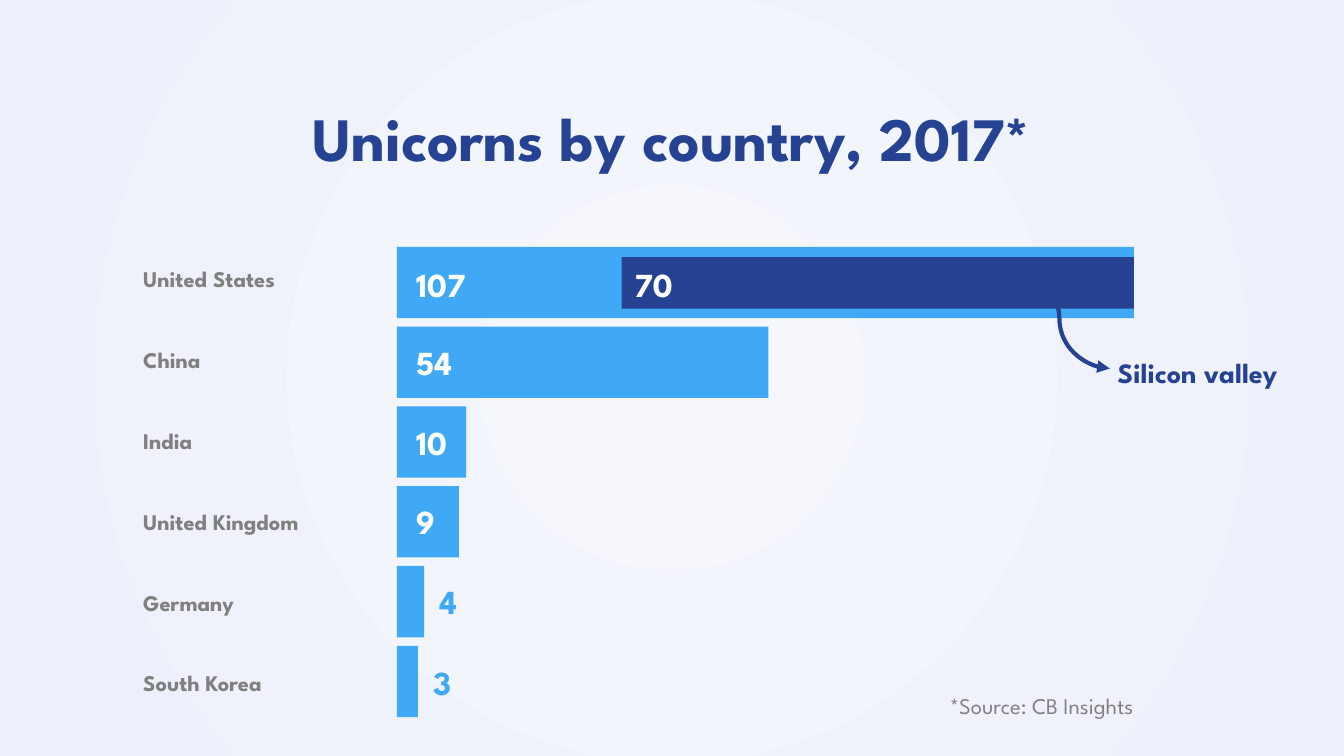
from dataclasses import dataclass

from lxml import etree
from pptx import Presentation
from pptx.dml.color import RGBColor
from pptx.enum.shapes import MSO_CONNECTOR, MSO_SHAPE
from pptx.enum.text import MSO_ANCHOR, MSO_AUTO_SIZE, PP_ALIGN
from pptx.oxml.ns import qn
from pptx.slide import Slide
from pptx.util import Emu, Pt

RECTANGLE = MSO_SHAPE.RECTANGLE
CURVE = MSO_CONNECTOR.CURVE
TOP, MIDDLE = MSO_ANCHOR.TOP, MSO_ANCHOR.MIDDLE
LEFT, CENTER, RIGHT = PP_ALIGN.LEFT, PP_ALIGN.CENTER, PP_ALIGN.RIGHT
FIT_SHAPE = MSO_AUTO_SIZE.SHAPE_TO_FIT_TEXT

FONT = "League Spartan"
COLORS = {
    "glow": "F5F7FD",
    "edge": "ECF0FA",
    "navy": "264292",
    "sky": "3FA9F5",
    "gray": "808080",
    "white": "FFFFFF",
}

SLIDE_W, SLIDE_H = 1280, 720
BAR_LEFT, BAR_TOP, BAR_H, BAR_PITCH = 378, 235, 68, 76
LONGEST_BAR, LARGEST_COUNT = 702, 107
COUNTRY_LEFT, COUNTRY_TOP, COUNTRY_PITCH = 127, 248, 77
TEXT_W, COUNTRY_H, COUNT_H = 205, 36, 48
SMALLEST_INSIDE = 9  # lower counts stand to the right of their bar


def px(length: int) -> Emu:
    return Emu(length * 9525)


def rgb(color: str) -> RGBColor:
    return RGBColor.from_string(COLORS[color])


@dataclass(frozen=True)
class Country:
    name: str
    unicorns: int
    count_top: int


@dataclass(frozen=True)
class Label:
    text: str
    left: int
    top: int
    width: int
    height: int
    size: int
    color: str
    bold: bool = True
    align: PP_ALIGN = LEFT
    anchor: MSO_ANCHOR = TOP


COUNTRIES = [
    Country("United States", 107, 247),
    Country("China", 54, 321),
    Country("India", 10, 397),
    Country("United Kingdom", 9, 472),
    Country("Germany", 4, 549),
    Country("South Korea", 3, 626),
]

TITLE = Label("Unicorns by country, 2017*", 115, 90, 1050, 81, 44, "navy",
              align=CENTER, anchor=MIDDLE)
VALLEY_COUNT = Label("70", 595, 247, TEXT_W, COUNT_H, 24, "white")
VALLEY_NAME = Label("Silicon valley", 1055, 334, 253, 42, 20, "navy")
SOURCE = Label("*Source: CB Insights", 836, 654, 253, COUNTRY_H, 16, "gray",
               bold=False, align=RIGHT)


def paint_background(slide: Slide) -> None:
    fill = slide.background.fill
    fill.gradient()
    for stop, color in zip(fill.gradient_stops, ("glow", "edge")):
        stop.color.rgb = rgb(color)
    gradient = slide.element.xpath(".//p:bgPr/a:gradFill")[0]
    gradient.remove(gradient.find(qn("a:lin")))
    circle = etree.SubElement(gradient, qn("a:path"), {"path": "circle"})
    etree.SubElement(circle, qn("a:fillToRect"),
                     {side: "50000" for side in "ltrb"})


def draw_label(slide: Slide, label: Label) -> None:
    box = slide.shapes.add_textbox(px(label.left), px(label.top),
                                   px(label.width), px(label.height))
    frame = box.text_frame
    frame.word_wrap = True
    frame.auto_size = FIT_SHAPE
    frame.vertical_anchor = label.anchor
    paragraph = frame.paragraphs[0]
    paragraph.alignment = label.align
    run = paragraph.add_run()
    run.text = label.text
    run.font.name = FONT
    run.font.size = Pt(label.size)
    run.font.bold = label.bold
    run.font.color.rgb = rgb(label.color)


def draw_bar(slide: Slide, left: int, top: int, width: int, height: int,
             color: str) -> None:
    bar = slide.shapes.add_shape(RECTANGLE, px(left), px(top),
                                 px(width), px(height))
    bar.shadow.inherit = False
    bar.fill.solid()
    bar.fill.fore_color.rgb = rgb(color)
    bar.line.fill.background()


def draw_country(slide: Slide, row: int, country: Country) -> None:
    width = round(LONGEST_BAR * country.unicorns / LARGEST_COUNT)
    draw_bar(slide, BAR_LEFT, BAR_TOP + row * BAR_PITCH, width, BAR_H, "sky")
    draw_label(slide, Label(country.name, COUNTRY_LEFT,
                            COUNTRY_TOP + row * COUNTRY_PITCH,
                            TEXT_W, COUNTRY_H, 16, "gray"))
    inside = country.unicorns >= SMALLEST_INSIDE
    count_left = BAR_LEFT + (9 if inside else width + 5)
    draw_label(slide, Label(str(country.unicorns), count_left,
                            country.count_top, TEXT_W, COUNT_H, 24,
                            "white" if inside else "sky"))


def draw_valley_arrow(slide: Slide) -> None:
    arrow = slide.shapes.add_connector(CURVE, px(961), px(255),
                                       px(1057), px(351))
    arrow.line.color.rgb = rgb("navy")
    arrow.line.width = Pt(3)
    etree.SubElement(arrow.line._get_or_add_ln(), qn("a:tailEnd"),
                     {"type": "triangle"})
    etree.SubElement(arrow.element.spPr, qn("a:effectLst"))


def main() -> None:
    deck = Presentation()
    deck.slide_width, deck.slide_height = px(SLIDE_W), px(SLIDE_H)
    slide = deck.slides.add_slide(deck.slide_layouts[6])
    paint_background(slide)
    draw_label(slide, TITLE)

    # Country bars with their names and counts
    for row, country in enumerate(COUNTRIES):
        draw_country(slide, row, country)

    # Silicon valley's part of the United States bar
    draw_bar(slide, 592, 245, 488, 49, "navy")
    draw_label(slide, VALLEY_COUNT)
    draw_valley_arrow(slide)
    draw_label(slide, VALLEY_NAME)

    draw_label(slide, SOURCE)
    deck.save("out.pptx")


if __name__ == "__main__":
    main()
